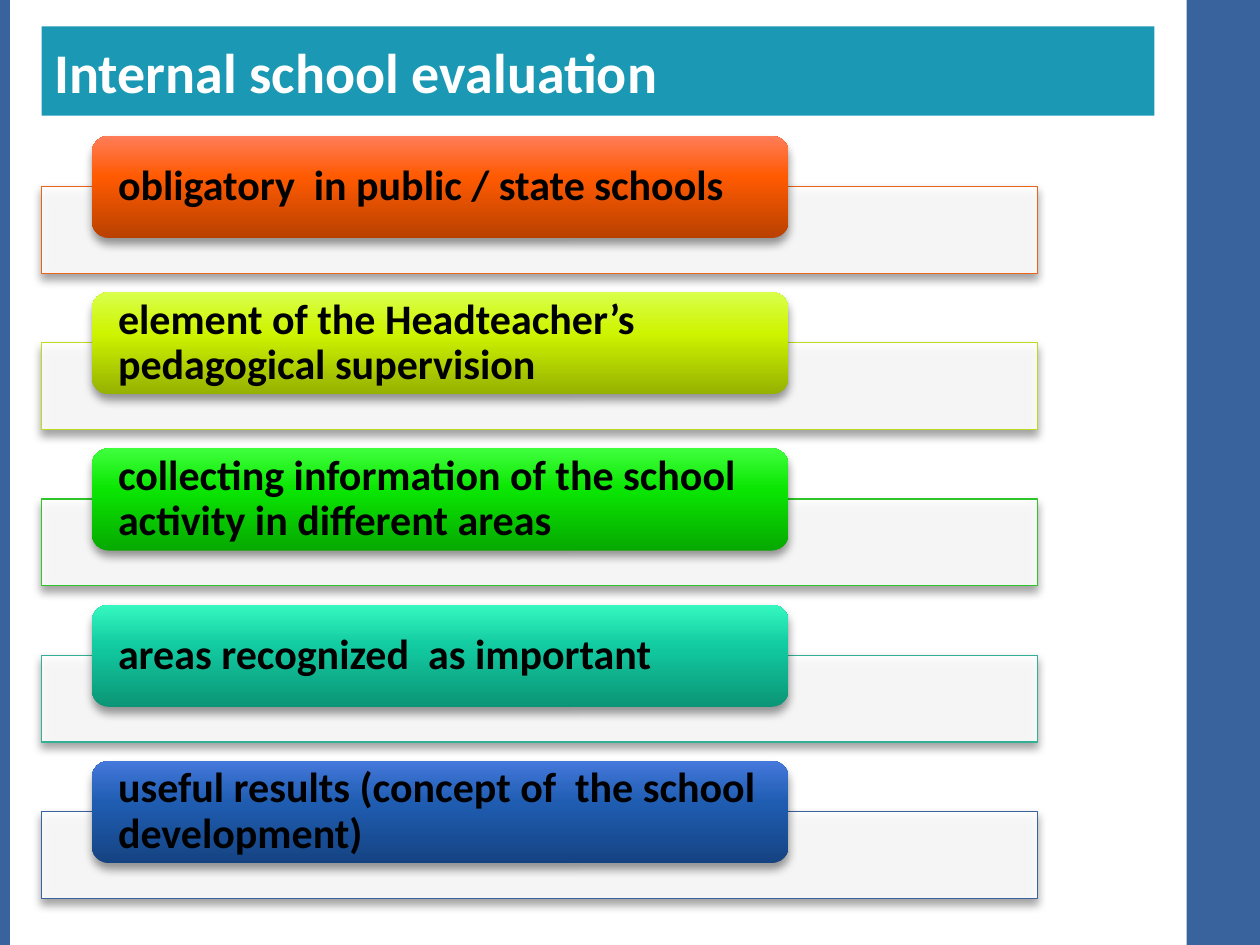
from lxml.etree import SubElement
from pptx import Presentation
from pptx.dml.color import RGBColor
from pptx.enum.shapes import MSO_SHAPE as Preset
from pptx.enum.text import MSO_ANCHOR as Anchor, MSO_AUTO_SIZE as AutoSize, PP_ALIGN as Align
from pptx.oxml.ns import qn
from pptx.util import Cm, Pt

FONT = "Calibri"
BLUE, TEAL, WHITE, BLACK = "39639D", "1B99B4", "FFFFFF", "000000"
WIDTH, HEIGHT = 25.4, 19.05
MARGIN = 0.84
FIRST_TOP, ROW_PITCH = 2.74, 3.15
BAR_OFFSET = 1.02  # from the top of a label to the top of its bar

# text, bar outline, label gradient from bottom to top
POINTS = [
    ("obligatory  in public / state schools",
     "EB641B", ("B94100", "FF5A01", "FF7D59")),
    ("element of the Headteacher’s pedagogical supervision",
     "BDDA20", ("95B100", "CEF400", "D9FF4C")),
    ("collecting information of the school activity in different areas",
     "2FC529", ("06A800", "0AE602", "3FFF3C")),
    ("areas recognized  as important",
     "32B094", ("0B9576", "12CBA1", "36F7C0")),
    ("useful results (concept of  the school development)",
     BLUE, ("154382", "1F5DB2", "4578DB")),
]


def rgb(color):
    return RGBColor.from_string(color)


def add_color(parent, color, alpha=None):
    node = SubElement(parent, qn("a:srgbClr"), val=color)
    if alpha is not None:
        SubElement(node, qn("a:alpha"), val=str(alpha * 1000))


class EvaluationSlide:
    def __init__(self, slide):
        self.slide = slide

    def format_text(self, shape, size, color):
        frame = shape.text_frame
        frame.word_wrap = True
        frame.auto_size = AutoSize.NONE
        frame.vertical_anchor = Anchor.MIDDLE
        paragraph = frame.paragraphs[0]
        paragraph.alignment = Align.LEFT
        font = paragraph.font
        font.name, font.size, font.bold = FONT, Pt(size), True
        font.color.rgb = rgb(color)
        return paragraph

    def title(self, text, left, top, width, height):
        title = self.slide.shapes.title
        title.left, title.top = Cm(left), Cm(top)
        title.width, title.height = Cm(width), Cm(height)
        title.fill.solid()
        title.fill.fore_color.rgb = rgb(TEAL)
        title.text_frame.text = text
        self.format_text(title, 32, WHITE)

    def block(self, preset, left, top, width, height, fill=None):
        """Add a shape without line or shadow."""
        block = self.slide.shapes.add_shape(
            preset, Cm(left), Cm(top), Cm(width), Cm(height))
        block.shadow.inherit = False
        block.line.fill.background()
        if fill:
            block.fill.solid()
            block.fill.fore_color.rgb = rgb(fill)
        return block

    def drop_shadow(self, shape):
        effects = shape.element.spPr.find(qn("a:effectLst"))
        shadow = SubElement(
            effects, qn("a:outerShdw"), blurRad=str(Pt(5.2)), dist=str(Pt(3)),
            dir="5400000", rotWithShape="0")
        add_color(shadow, BLACK, 40)

    def bar(self, top, outline):
        bar = self.block(Preset.RECTANGLE, MARGIN, top, 20.07, 1.75, WHITE)
        white = bar.element.spPr.find(qn("a:solidFill")).find(qn("a:srgbClr"))
        SubElement(white, qn("a:alpha"), val="90000")
        bar.line.color.rgb = rgb(outline)
        bar.line.width = Pt(0.75)
        self.drop_shadow(bar)

    def label(self, text, top, gradient):
        label = self.block(Preset.ROUNDED_RECTANGLE, 1.85, top, 14.05, 2.06)
        label.fill.gradient()
        label.fill.gradient_angle = 90
        stops = label.element.spPr.find(qn("a:gradFill")).find(qn("a:gsLst"))
        for stop in list(stops):
            stops.remove(stop)
        for position, color in zip((0, 60, 100), gradient):
            add_color(SubElement(stops, qn("a:gs"), pos=str(position * 1000)), color)
        self.drop_shadow(label)
        frame = label.text_frame
        frame.text = text
        frame.margin_left = frame.margin_right = Cm(0.43)
        frame.margin_top = frame.margin_bottom = 0
        self.format_text(label, 24, BLACK).line_spacing = 0.9


def main():
    deck = Presentation()
    deck.slide_width, deck.slide_height = Cm(WIDTH), Cm(HEIGHT)
    page = EvaluationSlide(deck.slides.add_slide(deck.slide_layouts[5]))

    for left, width in ((23.92, WIDTH - 23.92), (0, 0.2)):
        page.block(Preset.RECTANGLE, left, 0, width, HEIGHT, BLUE)
    page.title("Internal school evaluation", MARGIN, 0.53, 22.43, 1.8)

    for row, (text, outline, gradient) in enumerate(POINTS):
        top = FIRST_TOP + row * ROW_PITCH
        page.bar(top + BAR_OFFSET, outline)
        page.label(text, top, gradient)

    deck.save("out.pptx")


if __name__ == "__main__":
    main()
